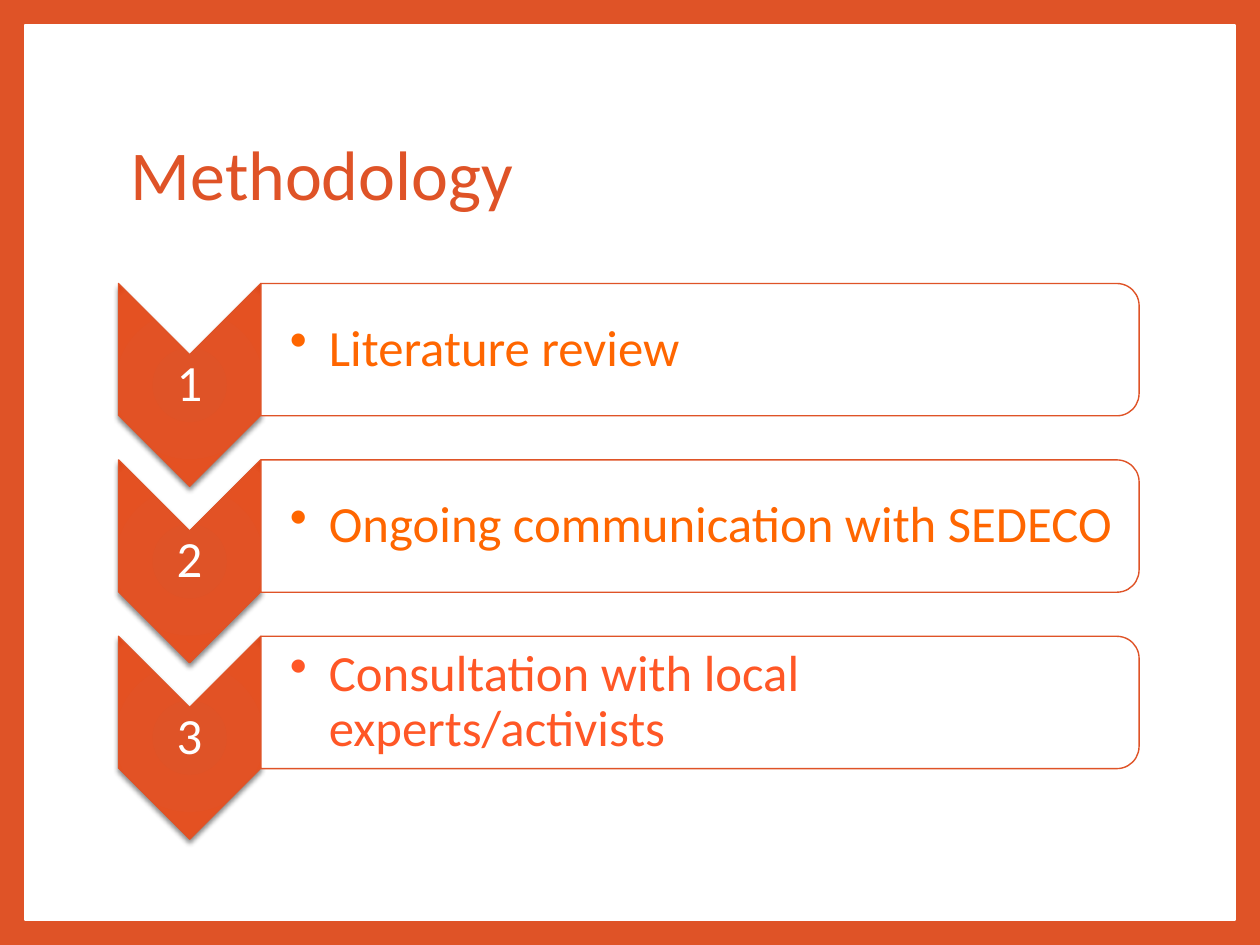
from pptx import Presentation
from pptx.dml.color import RGBColor
from pptx.enum.shapes import MSO_SHAPE as SHAPE
from pptx.enum.text import MSO_ANCHOR, PP_ALIGN
from pptx.oxml import parse_xml
from pptx.oxml.ns import nsdecls, qn
from pptx.util import Inches, Pt

TITLE = "Methodology"
STEPS = [
    ("Literature review", "FF6600"),
    ("Ongoing communication with SEDECO", "FF6600"),
    ("Consultation with local experts/activists", "FF5726"),
]
FONT, ORANGE, WHITE = "Calibri", "DF5327", "FFFFFF"
GLOW = [(0, "DF5327"), (90, "E45122"), (100, "DB4313")]

SLIDE_W, SLIDE_H, MARGIN = 10, 7.5, 0.2
LEFT, TOP, PITCH = 0.94, 2.25, 1.4
ARROW_W, ARROW_H = 1.13, 1.61
BAR_W, BAR_H = 6.97, 1.05
PAD = 0.02


def rgb(color):
    return RGBColor.from_string(color)


def add_shape(kind, x, y, w, h, fill, line, line_pt, turned=False):
    """Place a shape in the box x, y, w, h; a turned one is rotated to fill it."""
    if turned:
        x, y, w, h = x + (w - h) / 2, y + (h - w) / 2, h, w
    sp = s.shapes.add_shape(kind, *map(Inches, (x, y, w, h)))
    sp.rotation = 90 if turned else 0
    sp.shadow.inherit = False
    sp.fill.solid()
    sp.fill.fore_color.rgb = rgb(fill)
    sp.line.color.rgb = rgb(line)
    sp.line.width = Pt(line_pt)
    return sp


def add_text(text, x, y, w, h, size, color, insets=None, align=PP_ALIGN.LEFT):
    tf = s.shapes.add_textbox(*map(Inches, (x, y, w, h))).text_frame
    tf.word_wrap = True
    tf.vertical_anchor = MSO_ANCHOR.MIDDLE
    if insets:
        tf.margin_left, tf.margin_top, tf.margin_right, tf.margin_bottom = map(Inches, insets)
    tf.text = text
    p = tf.paragraphs[0]
    p.alignment = align
    p.line_spacing = 0.9
    font = p.runs[0].font
    font.name, font.size, font.color.rgb = FONT, Pt(size), rgb(color)
    return p


def add_bullet(p, indent):
    pPr = p._p.get_or_add_pPr()
    pPr.set("marL", str(Inches(indent)))
    pPr.set("indent", str(-Inches(indent)))
    pPr.append(parse_xml(f'<a:buChar {nsdecls("a")} char="•"/>'))


def add_glow_and_shadow(sp):
    """Give the arrow its radial gradient and a soft shadow below."""
    spPr = sp._element.spPr
    stops = "".join(f'<a:gs pos="{pos * 1000}"><a:srgbClr val="{c}"/></a:gs>' for pos, c in GLOW)
    spPr.replace(spPr.find(qn("a:solidFill")), parse_xml(
        f'<a:gradFill {nsdecls("a")} rotWithShape="1"><a:gsLst>{stops}</a:gsLst><a:path path="circle">'
        '<a:fillToRect l="100000" t="100000" r="100000" b="100000"/></a:path></a:gradFill>'))
    spPr.find(qn("a:effectLst")).append(parse_xml(
        f'<a:outerShdw {nsdecls("a")} blurRad="{Pt(3)}" dist="{Pt(2)}" dir="5400000" rotWithShape="0">'
        '<a:srgbClr val="000000"><a:alpha val="45000"/></a:srgbClr></a:outerShdw>'))


prs = Presentation()
prs.slide_width, prs.slide_height = Inches(SLIDE_W), Inches(SLIDE_H)
s = prs.slides.add_slide(prs.slide_layouts[6])
s.background.fill.solid()
s.background.fill.fore_color.rgb = rgb(ORANGE)

add_shape(SHAPE.RECTANGLE, MARGIN, MARGIN, SLIDE_W - 2 * MARGIN, SLIDE_H - 2 * MARGIN, WHITE, WHITE, 1)
add_text(TITLE, LEFT, 0.67, ARROW_W + BAR_W, 1.48, 40, ORANGE)

bar_x = LEFT + ARROW_W
for i, (step, color) in enumerate(STEPS):
    y = TOP + i * PITCH
    arrow = add_shape(SHAPE.CHEVRON, LEFT, y, ARROW_W, ARROW_H, ORANGE, ORANGE, 0.79, turned=True)
    add_glow_and_shadow(arrow)
    # The number sits between the arrow's notch and its point
    add_text(str(i + 1), LEFT, y + ARROW_W / 2, ARROW_W, ARROW_H - ARROW_W, 29, WHITE,
             [PAD] * 4, PP_ALIGN.CENTER)
    add_shape(SHAPE.ROUND_2_SAME_RECTANGLE, bar_x, y, BAR_W, BAR_H, WHITE, ORANGE, 0.79, turned=True)
    p = add_text(step, bar_x, y + 0.05, BAR_W - 0.05, BAR_H - 0.1, 29, color, (0.23, PAD, PAD, PAD))
    add_bullet(p, 0.31)

prs.save("out.pptx")
